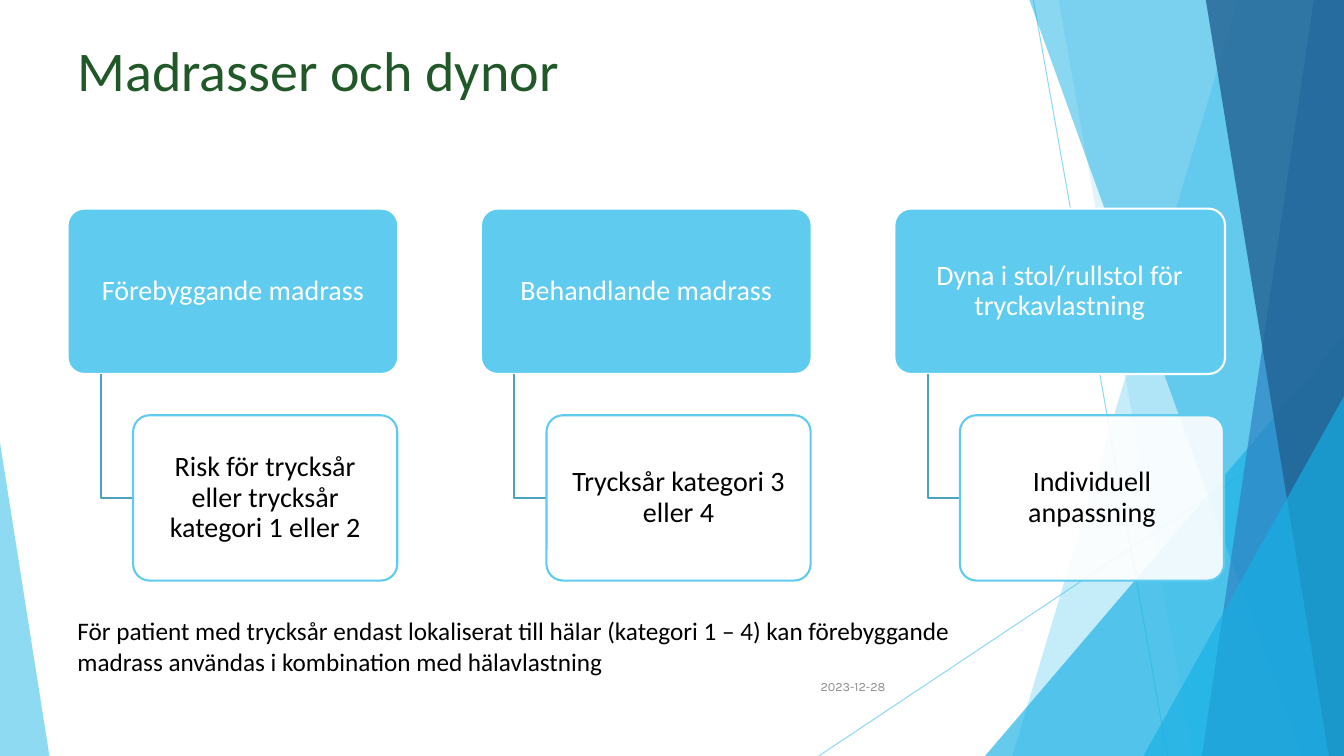
from lxml.etree import SubElement
from pptx import Presentation
from pptx.dml.color import RGBColor
from pptx.enum.shapes import MSO_CONNECTOR, MSO_SHAPE
from pptx.enum.text import MSO_ANCHOR, PP_ALIGN
from pptx.oxml.ns import qn
from pptx.util import Inches, Pt

SKY, CYAN, BLUE, NAVY = "5FCBEF", "17B0E4", "2E83C3", "226292"
WHITE, BLACK, GREEN, GREY, ELBOW = "FFFFFF", "000000", "215828", "8C8C8C", "4CA3BF"
WIDTH, HEIGHT = 13.33, 7.5

RAYS = [((10.25, 0), (11.58, HEIGHT)), ((WIDTH, 4.03), (8.12, HEIGHT))]
COLUMNS = [
    ("Förebyggande madrass", "Risk för trycksår eller trycksår kategori 1 eller 2"),
    ("Behandlande madrass", "Trycksår kategori 3 eller 4"),
    ("Dyna i stol/rullstol för tryckavlastning", "Individuell anpassning"),
]
FOOTNOTE = ("För patient med trycksår endast lokaliserat till hälar (kategori 1 – 4) "
            "kan förebyggande madrass användas i kombination med hälavlastning")


def paint(color_format, color, opacity=100):
    """Set a solid fill's colour and its opacity in percent."""
    color_format.solid()
    color_format.fore_color.rgb = RGBColor.from_string(color)
    if opacity < 100:
        tint = color_format._xPr.find(qn("a:solidFill"))[0]
        SubElement(tint, qn("a:alpha")).set("val", str(opacity * 1000))


def style(shape, fill=None, opacity=100, line=None):
    """Give a shape its fill and outline and remove its shadow."""
    shape.shadow.inherit = False
    if fill:
        paint(shape.fill, fill, opacity)
    else:
        shape.fill.background()
    if line:
        paint(shape.line.fill, line)
        shape.line.width = Pt(1.5)
    else:
        shape.line.fill.background()


def add_path(slide, points, closed):
    """Draw an outline through points given in inches."""
    corners = [(Inches(x), Inches(y)) for x, y in points]
    builder = slide.shapes.build_freeform(*corners[0], scale=1.0)
    builder.add_line_segments(corners[1:], close=closed)
    return builder.convert_to_shape()


def add_ray(slide, start, end):
    """Draw a thin translucent line of the backdrop."""
    ray = slide.shapes.add_connector(
        MSO_CONNECTOR.STRAIGHT, *(Inches(value) for value in start + end))
    paint(ray.line.fill, SKY, 70)
    ray.line.width = Pt(0.75)
    SubElement(ray._element.spPr, qn("a:effectLst"))


def add_band(slide, top, bottom, color, opacity):
    """Draw a slanted band reaching the right edge of the slide."""
    edge = [(top, 0), (WIDTH, 0), (WIDTH, HEIGHT), (bottom, HEIGHT)]
    style(add_path(slide, edge, True), color, opacity)


def add_wedge(slide, left, top, width, apex, color, opacity):
    """Draw a right triangle standing on the bottom edge."""
    wedge = slide.shapes.add_shape(
        MSO_SHAPE.ISOSCELES_TRIANGLE, Inches(left), Inches(top),
        Inches(width), Inches(HEIGHT - top))
    wedge.adjustments[0] = apex
    style(wedge, color, opacity)


def write(frame, text, size, color, font="Calibri", align=PP_ALIGN.LEFT,
          anchor=MSO_ANCHOR.TOP):
    """Write one paragraph and return it."""
    frame.word_wrap = True
    frame.vertical_anchor = anchor
    paragraph = frame.paragraphs[0]
    paragraph.alignment = align
    run = paragraph.add_run()
    run.text = text
    run.font.size = Pt(size)
    run.font.name = font
    run.font.color.rgb = RGBColor.from_string(color)
    return paragraph


def add_label(slide, box, *text, **options):
    """Add a text box at left, top, width and height in inches."""
    label = slide.shapes.add_textbox(*(Inches(value) for value in box))
    write(label.text_frame, *text, **options)


def add_card(slide, box, text, color, fill, opacity, line):
    """Add a rounded card with centred text."""
    card = slide.shapes.add_shape(
        MSO_SHAPE.ROUNDED_RECTANGLE, *(Inches(value) for value in box))
    card.adjustments[0] = 0.1
    style(card, fill, opacity, line)
    frame = card.text_frame
    frame.margin_left = frame.margin_right = Inches(0.09)
    frame.margin_top = frame.margin_bottom = Inches(0.08)
    paragraph = write(frame, text, 20, color, align=PP_ALIGN.CENTER,
                      anchor=MSO_ANCHOR.MIDDLE)
    paragraph.line_spacing = 0.9


def add_column(slide, left, heading, detail):
    """Add a heading card with its detail card hung on an elbow line."""
    stem, indent = left + 0.33, left + 0.65
    add_card(slide, (left, 2.07, 3.28, 1.64), heading, WHITE, SKY, 100, WHITE)
    elbow = add_path(slide, [(stem, 3.71), (stem, 4.94), (indent, 4.94)], False)
    style(elbow, line=ELBOW)
    add_card(slide, (indent, 4.12, 2.62, 1.64), detail, BLACK, WHITE, 90, SKY)


def add_backdrop(slide):
    """Draw the translucent facets along the slide's edges."""
    for start, end in RAYS:
        add_ray(slide, start, end)
    add_band(slide, 12.28, 10.04, SKY, 36)
    add_band(slide, 10.5, 11.83, SKY, 20)
    add_wedge(slide, 9.77, 3.33, 3.56, 1, CYAN, 66)
    add_band(slide, 10.21, 12.91, CYAN, 50)
    add_band(slide, 13.03, 11.92, BLUE, 70)
    add_band(slide, 11.96, 13.18, NAVY, 80)
    add_wedge(slide, 11.34, 3.93, 1.99, 1, CYAN, 66)
    add_wedge(slide, 0, 4.39, 0.49, 0, SKY, 70)


def main():
    """Build the slide and save it."""
    deck = Presentation()
    deck.slide_width, deck.slide_height = Inches(WIDTH), Inches(HEIGHT)
    slide = deck.slides.add_slide(deck.slide_layouts[6])
    add_backdrop(slide)
    add_label(slide, (0.67, 0.3, 11.98, 1.67), "Madrasser och dynor", 40, GREEN)
    for index, (heading, detail) in enumerate(COLUMNS):
        add_column(slide, 0.67 + 4.1 * index, heading, detail)
    add_label(slide, (0.67, 6.06, 9.34, 0.71), FOOTNOTE, 18, BLACK)
    add_label(slide, (7.88, 6.61, 1, 0.4), "2023-12-28", 9, GREY, font="Karla",
              align=PP_ALIGN.RIGHT, anchor=MSO_ANCHOR.MIDDLE)
    deck.save("out.pptx")


if __name__ == "__main__":
    main()
